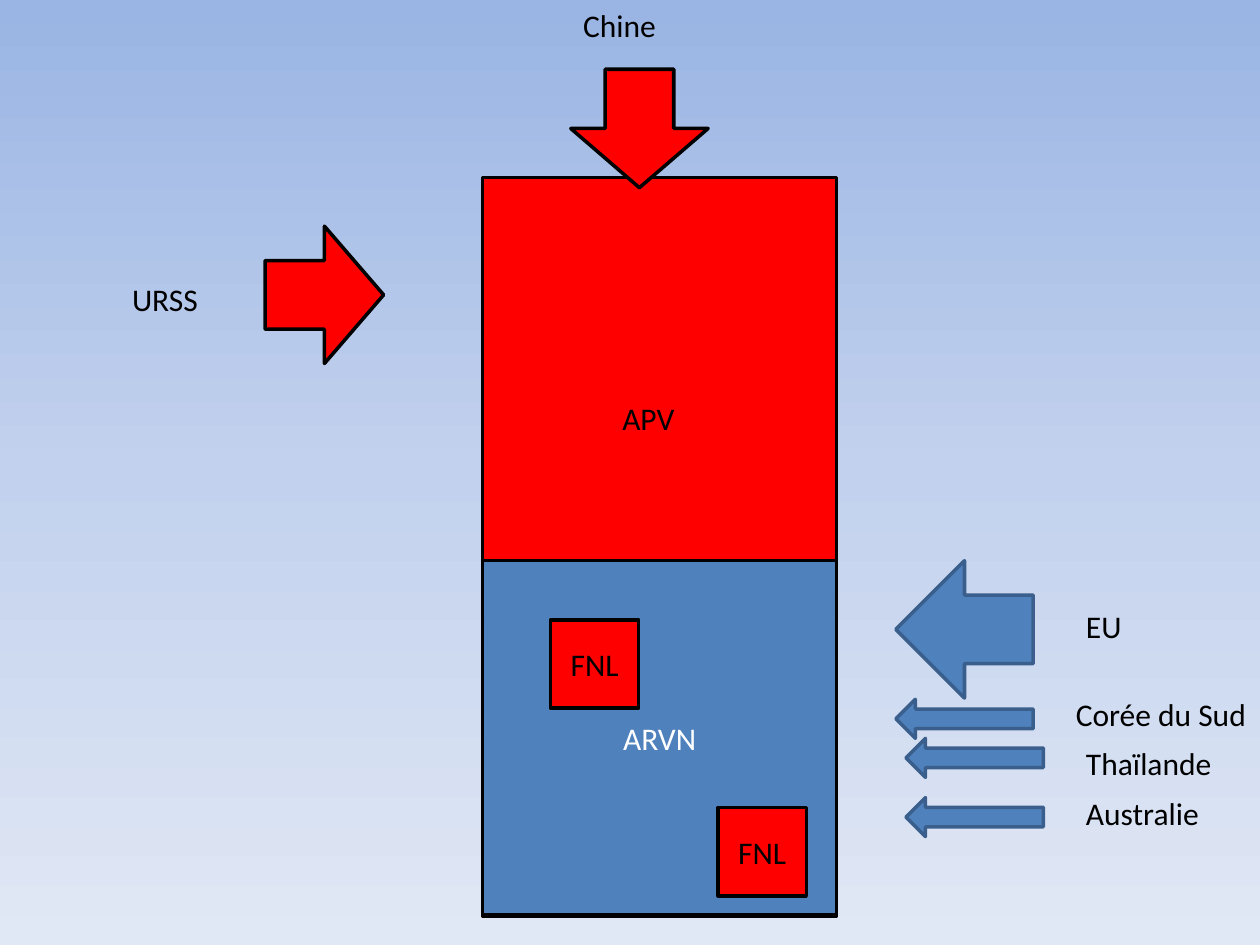
from copy import deepcopy

from pptx import Presentation
from pptx.dml.color import RGBColor
from pptx.enum.shapes import MSO_SHAPE
from pptx.enum.text import MSO_ANCHOR, MSO_AUTO_SIZE, PP_ALIGN
from pptx.oxml.ns import qn
from pptx.util import Inches, Pt

RECTANGLE = MSO_SHAPE.RECTANGLE
LEFT_ARROW = MSO_SHAPE.LEFT_ARROW
DOWN_ARROW = MSO_SHAPE.DOWN_ARROW
CENTER = PP_ALIGN.CENTER
MIDDLE = MSO_ANCHOR.MIDDLE
FIT_SHAPE = MSO_AUTO_SIZE.SHAPE_TO_FIT_TEXT

FONT = "Calibri"
RED, BLUE, BLUE_EDGE = "FF0000", "4F81BD", "3A5F8C"
BLACK, WHITE = "000000", "FFFFFF"
SKY = [(0, "9AB5E4"), (0.5, "C2D1ED"), (1, "E1E8F5")]

ALLY_ARROWS = [
    (7.11, 4.45, 1.09),
    (7.11, 5.55, 0.31),
    (7.19, 5.86, 0.31),
    (7.19, 6.33, 0.31),
]
LABELS = [
    ("APV", 4.84, 3.12, 0.68),
    ("Chine", 4.53, 0, 0.85),
    ("URSS", 0.95, 2.17, 0.73),
    ("EU", 8.52, 4.77, 0.49),
    ("Corée du Sud", 8.44, 5.47, 1.57),
    ("Thaïlande", 8.52, 5.86, 1.21),
    ("Australie", 8.52, 6.25, 1.11),
]


def color(hex_string):
    return RGBColor.from_string(hex_string)


def set_background(slide, stops):
    """Fill the slide with a top-to-bottom gradient of three stops."""
    fill = slide.background.fill
    fill.gradient()
    fill.gradient_angle = 270
    stop_list = next(slide.element.iter(qn("a:gsLst")))
    stop_list.insert(1, deepcopy(stop_list[0]))
    for stop, (position, hex_string) in zip(fill.gradient_stops, stops):
        stop.position = position
        stop.color.rgb = color(hex_string)


def write(shape, text, hex_string):
    paragraph = shape.text_frame.paragraphs[0]
    paragraph.text = text
    font = paragraph.runs[0].font
    font.name = FONT
    font.size = Pt(18)
    font.color.rgb = color(hex_string)
    return paragraph


def add_block(slide, kind, box, fill, edge=BLACK, text="", text_color=BLACK):
    shape = slide.shapes.add_shape(kind, *map(Inches, box))
    shape.shadow.inherit = False
    shape.fill.solid()
    shape.fill.fore_color.rgb = color(fill)
    shape.line.color.rgb = color(edge)
    shape.line.width = Pt(2)
    if text:
        shape.text_frame.vertical_anchor = MIDDLE
        write(shape, text, text_color).alignment = CENTER
    return shape


def add_label(slide, text, left, top, width):
    box = slide.shapes.add_textbox(*map(Inches, (left, top, width, 0.4)))
    box.text_frame.word_wrap = False
    box.text_frame.auto_size = FIT_SHAPE
    write(box, text, BLACK)


def main():
    presentation = Presentation()
    presentation.slide_width = Inches(10)
    presentation.slide_height = Inches(7.5)
    slide = presentation.slides.add_slide(presentation.slide_layouts[6])
    set_background(slide, SKY)

    add_block(slide, RECTANGLE, (3.83, 1.41, 2.81, 5.86), RED)
    add_block(slide, RECTANGLE, (3.83, 4.45, 2.81, 2.81), BLUE,
              text="ARVN", text_color=WHITE)
    for left, top, height in ALLY_ARROWS:
        add_block(slide, LEFT_ARROW, (left, top, 1.09, height), BLUE, BLUE_EDGE)
    for left, top in [(4.37, 4.92), (5.7, 6.41)]:
        add_block(slide, RECTANGLE, (left, top, 0.7, 0.7), RED, text="FNL")
    for left, top, rotation in [(4.53, 0.55, 0), (2.03, 1.87, 270)]:
        arrow = add_block(slide, DOWN_ARROW, (left, top, 1.09, 0.94), RED)
        arrow.rotation = rotation
    for label in LABELS:
        add_label(slide, *label)

    presentation.save("out.pptx")


if __name__ == "__main__":
    main()
